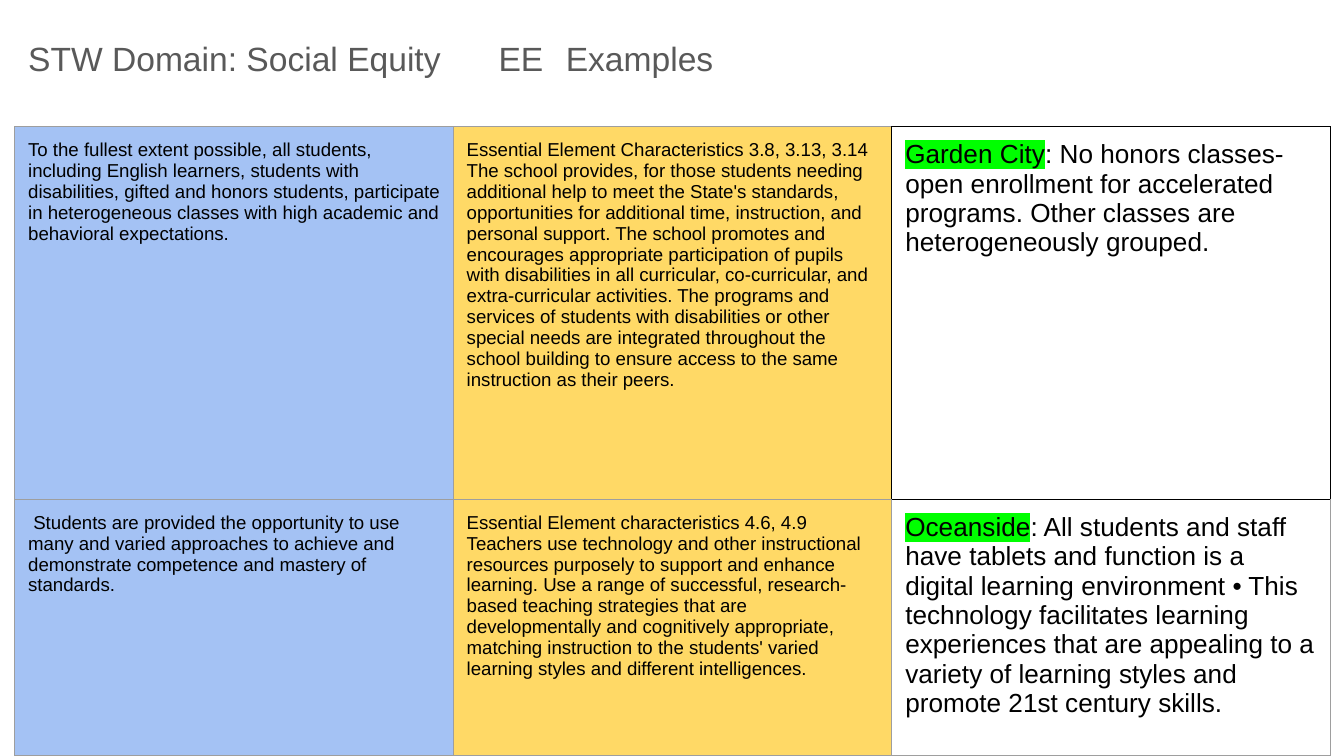
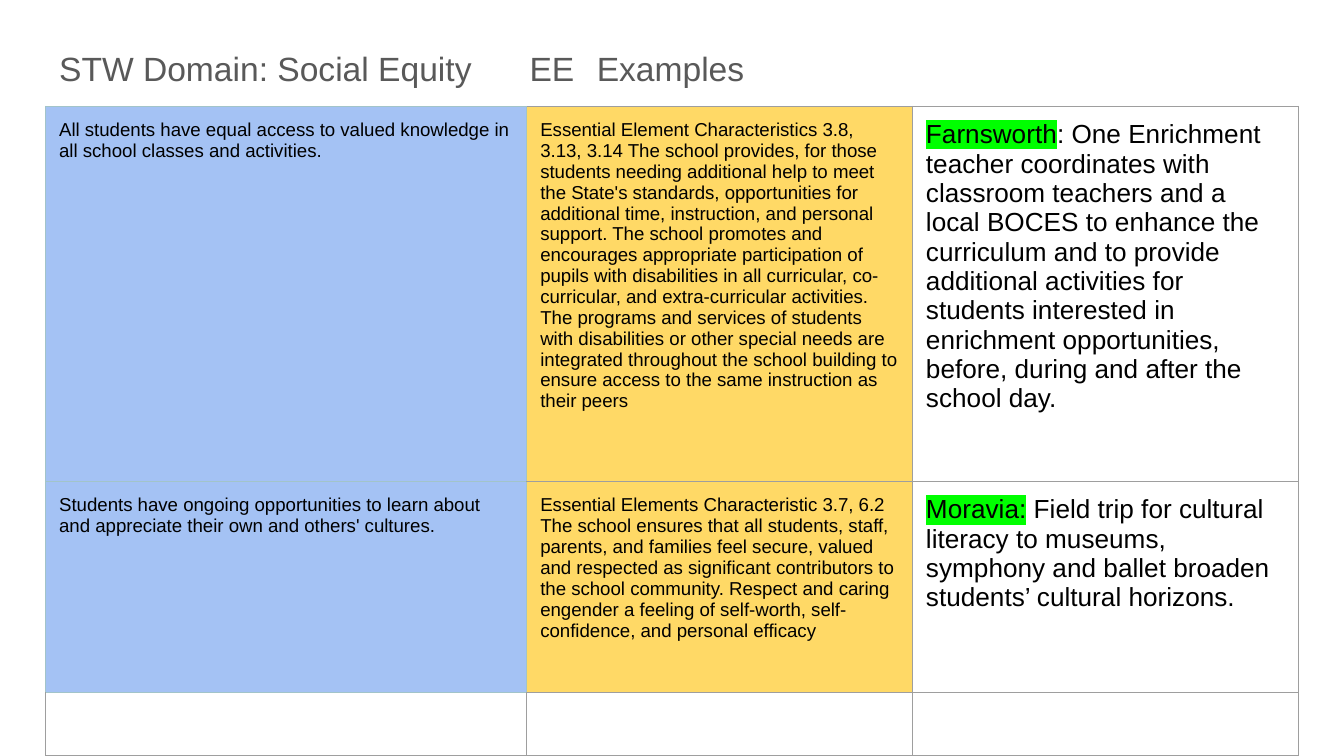
from dataclasses import dataclass

from lxml.etree import SubElement
from pptx import Presentation
from pptx.dml.color import RGBColor
from pptx.enum.text import MSO_ANCHOR, MSO_AUTO_SIZE, PP_ALIGN
from pptx.oxml.ns import qn
from pptx.util import Inches, Pt


@dataclass(frozen=True)
class Theme:
    font: str = "Arial"
    heading: str = "595959"
    text: str = "000000"
    domain: str = "A4C2F4"
    element: str = "FFD966"
    highlight: str = "00FF00"
    grid: str = "9E9E9E"
    teal: str = "A2C4C9"
    heading_size: int = 18
    body_size: int = 10
    example_size: int = 14
    border: float = 0.75
    inset: float = 0.1


THEME = Theme()
SLIDE_WIDTH = Inches(10)
SLIDE_HEIGHT = SLIDE_WIDTH * 9 // 16
HEADINGS = ("STW Domain: Social Equity", "EE", "Examples")
SIDES = {"L": (0, -1), "R": (0, 1), "T": (-1, 0), "B": (1, 0)}


@dataclass(frozen=True)
class Box:
    """A region in percent of the slide's width and height."""
    left: float
    top: float
    width: float
    height: float

    def lengths(self):
        return (round(SLIDE_WIDTH * self.left / 100), round(SLIDE_HEIGHT * self.top / 100),
                round(SLIDE_WIDTH * self.width / 100), round(SLIDE_HEIGHT * self.height / 100))


def style_span(span, size, color):
    span.font.name = THEME.font
    span.font.size = Pt(size)
    span.font.bold = False
    span.font.color.rgb = RGBColor.from_string(color)


def add_color(parent, color):
    fill = SubElement(parent, qn("a:solidFill"))
    SubElement(fill, qn("a:srgbClr"), val=color)


def highlight_span(span):
    properties = span.font._element
    mark = SubElement(properties, qn("a:highlight"))
    SubElement(mark, qn("a:srgbClr"), val=THEME.highlight)
    properties.find(qn("a:solidFill")).addnext(mark)


def share_out(total, weights):
    return [round(total * weight / sum(weights)) for weight in weights]


def add_headings(page, box, stops):
    """Put the three column headings in the body, spaced by tab stops in inches."""
    body = page.placeholders[1]
    body.left, body.top, body.width, body.height = box.lengths()
    frame = body.text_frame
    frame.text = "\t".join(HEADINGS)
    frame.word_wrap = True
    frame.auto_size = MSO_AUTO_SIZE.NONE
    frame.vertical_anchor = MSO_ANCHOR.TOP
    frame.margin_left = frame.margin_right = Inches(THEME.inset)
    frame.margin_top = frame.margin_bottom = Inches(THEME.inset)
    para = frame.paragraphs[0]
    para.alignment = PP_ALIGN.LEFT
    para.line_spacing = 1.15
    para.space_before = Pt(0)
    tabs = SubElement(para._p.get_or_add_pPr(), qn("a:tabLst"))
    for stop in stops:
        SubElement(tabs, qn("a:tab"), pos=str(Inches(stop)), algn="l")
    for span in para.runs:
        style_span(span, THEME.heading_size, THEME.heading)


def draw_borders(cell, row, column, frames):
    """Use the cell's frame colour, then its neighbour's, then the grid's."""
    properties = cell._tc.get_or_add_tcPr()
    for side, (down, across) in SIDES.items():
        neighbour = frames.get((row + down, column + across), THEME.grid)
        line = SubElement(properties, qn(f"a:ln{side}"), w=str(Pt(THEME.border)))
        add_color(line, frames.get((row, column), neighbour))


def fill_cell(cell, spans, size, fill):
    """Write the spans; where there are two, the first is highlighted."""
    cell.margin_left = cell.margin_right = Inches(THEME.inset)
    cell.margin_top = cell.margin_bottom = Inches(THEME.inset)
    para = cell.text_frame.paragraphs[0]
    for text in spans:
        span = para.add_run()
        span.text = text
        style_span(span, size, THEME.text)
    if len(spans) > 1:
        highlight_span(para.runs[0])
    if not spans:
        SubElement(para._p, qn("a:endParaRPr"), sz=str(THEME.body_size * 100))
    if fill:
        cell.fill.solid()
        cell.fill.fore_color.rgb = RGBColor.from_string(fill)
    else:
        cell.fill.background()


def add_equity_table(page, box, columns, rows, entries, frames):
    """Columns and rows are relative weights; rows past the entries stay empty."""
    left, top, width, height = box.lengths()
    table = page.shapes.add_table(len(rows), len(columns), left, top, width, height).table
    table.first_row = table.horz_banding = False
    for column, length in zip(table.columns, share_out(width, columns)):
        column.width = length
    for row, length in zip(table.rows, share_out(height, rows)):
        row.height = length
    sizes = (THEME.body_size, THEME.body_size, THEME.example_size)
    fills = (THEME.domain, THEME.element, None)
    for row in range(len(rows)):
        filled = row < len(entries)
        for column, size in enumerate(sizes):
            cell = table.cell(row, column)
            draw_borders(cell, row, column, frames)
            fill_cell(cell, entries[row][column] if filled else (), size,
                      fills[column] if filled else None)


def add_equity_page(deck, heading_box, stops, table_box, columns, rows, entries, frames):
    page = deck.slides.add_slide(deck.slide_layouts.get_by_name("Section Header"))
    empty_title = page.shapes.title._element
    empty_title.getparent().remove(empty_title)
    add_headings(page, heading_box, stops)
    add_equity_table(page, table_box, columns, rows, entries, frames)


SUPPORT = (
    "Essential Element Characteristics 3.8, 3.13, 3.14 The school provides, for those students "
    "needing additional help to meet the State's standards, opportunities for additional time, "
    "instruction, and personal support. The school promotes and encourages appropriate "
    "participation of pupils with disabilities in all curricular, co-curricular, and "
    "extra-curricular activities. The programs and services of students with disabilities or "
    "other special needs are integrated throughout the school building to ensure access to the "
    "same instruction as their peers"
)

CLASSES_AND_APPROACHES = [
    (
        ("To the fullest extent possible, all students, including English learners, students "
         "with disabilities, gifted and honors students, participate in heterogeneous classes "
         "with high academic and behavioral expectations.",),
        (SUPPORT + ".",),
        ("Garden City", ": No honors classes- open enrollment for accelerated programs. Other "
         "classes are heterogeneously grouped."),
    ),
    (
        (" Students are provided the opportunity to use many and varied approaches to achieve "
         "and demonstrate competence and mastery of standards.",),
        ("Essential Element characteristics 4.6, 4.9 Teachers use technology and other "
         "instructional resources purposely to support and enhance learning. Use a range of "
         "successful, research-based teaching strategies that are developmentally and "
         "cognitively appropriate, matching instruction to the students' varied learning "
         "styles and different intelligences.",),
        ("Oceanside", ": All students and staff have tablets and function is a digital learning "
         "environment • This technology facilitates learning experiences that are appealing to "
         "a variety of learning styles and promote 21st century skills."),
    ),
]

ACCESS_AND_CULTURES = [
    (
        ("All students have equal access to valued knowledge in all school classes and "
         "activities.",),
        (SUPPORT,),
        ("Farnsworth", ": One Enrichment teacher coordinates with classroom teachers and a "
         "local BOCES to enhance the curriculum and to provide additional activities for "
         "students interested in enrichment opportunities, before, during and after the "
         "school day."),
    ),
    (
        ("Students have ongoing opportunities to learn about and appreciate their own and "
         "others' cultures.",),
        ("Essential Elements Characteristic 3.7, 6.2 The school ensures that all students, "
         "staff, parents, and families feel secure, valued and respected as significant "
         "contributors to the school community. Respect and caring engender a feeling of "
         "self-worth, self-confidence, and personal efficacy",),
        ("Moravia:", " Field trip for cultural literacy to museums, symphony and ballet broaden "
         "students’ cultural horizons."),
    ),
]


def main():
    deck = Presentation()
    deck.slide_width, deck.slide_height = SLIDE_WIDTH, SLIDE_HEIGHT
    add_equity_page(
        deck, Box(1.1, 2.49, 97.9, 92.98), (4.28, 7),
        Box(1.1, 16.75, 97.9, 83.25), (1, 1, 1), (2.77, 1.91),
        CLASSES_AND_APPROACHES, {(0, 2): THEME.text})
    add_equity_page(
        deck, Box(3.4, 3.73, 92.7, 8.18), (4.39, 6.98),
        Box(3.4, 14.08, 93.2, 85.92), (3.58, 2.87, 2.87), (2.79, 1.57, 0.47),
        ACCESS_AND_CULTURES, {(0, 0): THEME.teal, (1, 0): THEME.teal})
    deck.save("out.pptx")


if __name__ == "__main__":
    main()
